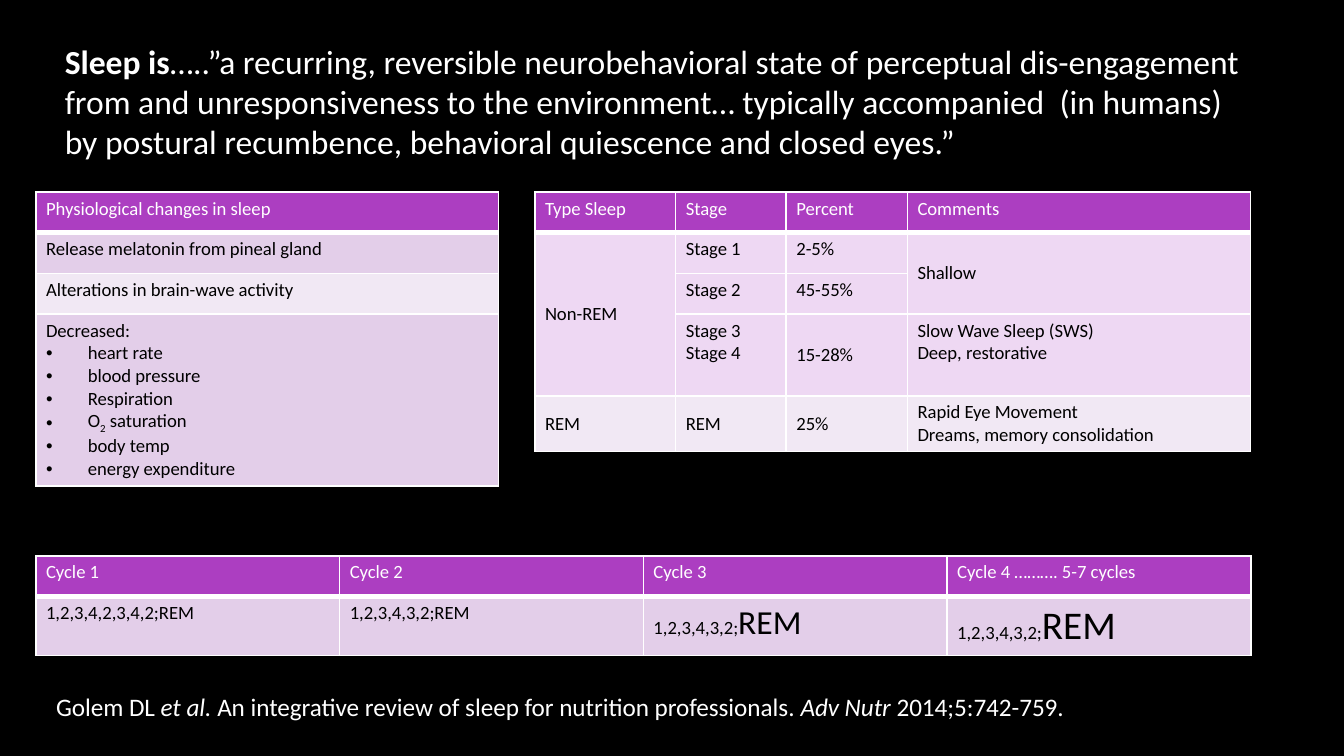
from dataclasses import dataclass
from typing import NamedTuple

from lxml import etree
from pptx import Presentation
from pptx.dml.color import RGBColor
from pptx.enum import text as t
from pptx.oxml import ns
from pptx.util import Cm, Pt

BLACK = RGBColor(0x00, 0x00, 0x00)
WHITE = RGBColor(0xFF, 0xFF, 0xFF)
PURPLE = RGBColor(0xAC, 0x3E, 0xC1)
LILAC = RGBColor(0xE3, 0xCE, 0xE9)
PINK = RGBColor(0xEE, 0xD8, 0xF3)
PALE = RGBColor(0xF1, 0xE8, 0xF4)

FONT = "Calibri"
ROW = 0.77
BULLET_INDENT = 0.79


class Span(NamedTuple):
    text: str
    size: float = 10
    bold: bool = False
    italic: bool = False
    baseline: int = 0


class Line(NamedTuple):
    spans: list[Span]
    bullet: bool = False


class Cell(NamedTuple):
    lines: list[Line]
    middle: bool = False
    rows: int = 1


@dataclass
class Grid:
    left: float
    top: float
    widths: list[float]
    heights: list[float]
    fills: list[RGBColor]
    cells: list[list[Cell | None]]  # None is covered by the cell above


def plain(*texts: str, middle: bool = False, rows: int = 1) -> Cell:
    return Cell([Line([Span(text)]) for text in texts], middle, rows)


def add_span(para, text: str, *, size: float = 10, color: RGBColor = WHITE,
             bold: bool = False, italic: bool = False, baseline: int = 0) -> None:
    span = para.add_run()
    span.text = text
    font = span.font
    font.name, font.size = FONT, Pt(size)
    font.bold, font.italic = bold, italic
    font.color.rgb = color
    if baseline:
        span._r.get_or_add_rPr().set("baseline", str(baseline * 1000))


def add_bullet(para) -> None:
    props = para._p.get_or_add_pPr()
    props.set("marL", str(Cm(BULLET_INDENT)))
    props.set("indent", str(-Cm(BULLET_INDENT)))
    etree.SubElement(props, ns.qn("a:buFont"), typeface="Arial")
    etree.SubElement(props, ns.qn("a:buChar"), char="•")


def write_lines(frame, lines: list[Line], color: RGBColor) -> None:
    for index, line in enumerate(lines):
        para = frame.add_paragraph() if index else frame.paragraphs[0]
        para.alignment = t.PP_ALIGN.LEFT
        if line.bullet:
            add_bullet(para)
        for span in line.spans:
            add_span(para, color=color, **span._asdict())


def style_cell(cell, fill: RGBColor, header: bool) -> None:
    """Set borders, then fill: the schema wants them in that order."""
    props = cell._tc.get_or_add_tcPr()
    for side in "LRTB":
        width = Pt(3 if header and side == "B" else 1)
        border = etree.SubElement(props, ns.qn(f"a:ln{side}"), w=str(width))
        solid = etree.SubElement(border, ns.qn("a:solidFill"))
        etree.SubElement(solid, ns.qn("a:srgbClr"), val=str(WHITE))
    cell.fill.solid()
    cell.fill.fore_color.rgb = fill
    cell.margin_left = cell.margin_right = Cm(0.19)
    cell.margin_top = cell.margin_bottom = Cm(0.1)


def draw_grid(page, grid: Grid) -> None:
    table = page.shapes.add_table(
        len(grid.heights), len(grid.widths), Cm(grid.left), Cm(grid.top),
        Cm(sum(grid.widths)), Cm(sum(grid.heights))).table
    for column, width in zip(table.columns, grid.widths):
        column.width = Cm(width)
    for row, height in zip(table.rows, grid.heights):
        row.height = Cm(height)
    for r, (fill, cells) in enumerate(zip(grid.fills, grid.cells)):
        for c, content in enumerate(cells):
            cell = table.cell(r, c)
            style_cell(cell, fill, header=r == 0)
            if content is None:
                continue
            if content.rows > 1:
                cell.merge(table.cell(r + content.rows - 1, c))
            if content.middle:
                cell.vertical_anchor = t.MSO_ANCHOR.MIDDLE
            write_lines(cell.text_frame, content.lines, BLACK if r else WHITE)


STAGES = Grid(
    10.11, 3.63, [2.66, 2.09, 2.29, 6.48], [ROW, ROW, ROW, 2 * ROW, 1.04],
    [PURPLE, PINK, PINK, PINK, PALE],
    [
        [plain(name) for name in ("Type Sleep", "Stage", "Percent", "Comments")],
        [plain("Non-REM", middle=True, rows=3), plain("Stage 1"), plain("2-5%"),
         plain("Shallow", middle=True, rows=2)],
        [None, plain("Stage 2"), plain("45-55%"), None],
        [None, plain("Stage 3", "Stage 4"), plain("15-28%", middle=True),
         plain("Slow Wave Sleep (SWS)", "Deep, restorative")],
        [plain("REM", middle=True), plain("REM", middle=True), plain("25%", middle=True),
         plain("Rapid Eye Movement", "Dreams, memory consolidation")],
    ])

CYCLES = Grid(
    0.68, 10.51, [5.74] * 4, [ROW, 1.08], [PURPLE, LILAC],
    [
        [plain(name) for name in ("Cycle 1", "Cycle 2", "Cycle 3", "Cycle 4 ………. 5-7 cycles")],
        [plain("1,2,3,4,2,3,4,2;REM"), plain("1,2,3,4,3,2;REM")]
        + [Cell([Line([Span("1,2,3,4,3,2;"), Span("REM", size)])]) for size in (18, 21)],
    ])

DECREASED = [
    [Span("heart rate")],
    [Span("blood pressure")],
    [Span("Respiration")],
    [Span("O"), Span("2", baseline=-25), Span(" saturation")],
    [Span("body temp")],
    [Span("energy expenditure")],
]

CHANGES = Grid(
    0.68, 3.63, [8.74], [ROW, ROW, ROW, 3.2], [PURPLE, LILAC, PALE, LILAC],
    [
        [plain("Physiological changes in sleep")],
        [plain("Release melatonin from pineal gland")],
        [plain("Alterations in brain-wave activity")],
        [Cell([Line([Span("Decreased:")])] + [Line(spans, True) for spans in DECREASED])],
    ])

DEFINITION = Line([
    Span("Sleep is", 18, bold=True),
    Span("…..”a recurring, reversible neurobehavioral state of perceptual dis-engagement "
         "from and unresponsiveness to the environment… typically accompanied  (in humans) "
         "by postural recumbence, behavioral quiescence and closed eyes.”", 18),
])

CITATION = Line([
    Span("Golem DL ", 13.5),
    Span("et al. ", 13.5, italic=True),
    Span("An integrative review of sleep for nutrition professionals. ", 13.5),
    Span("Adv Nutr ", 13.5, italic=True),
    Span("2014;5:742-759.", 13.5),
])


def main() -> None:
    deck = Presentation()
    deck.slide_width, deck.slide_height = Cm(25.4), Cm(14.29)
    page = deck.slides.add_slide(deck.slide_layouts[5])
    page.background.fill.solid()
    page.background.fill.fore_color.rgb = BLACK

    title = page.shapes.title
    title.left, title.top, title.width, title.height = Cm(0.97), Cm(0.64), Cm(22.73), Cm(2.57)
    title.text_frame.vertical_anchor = t.MSO_ANCHOR.TOP
    title.text_frame.auto_size = t.MSO_AUTO_SIZE.NONE
    title.text_frame.word_wrap = True
    write_lines(title.text_frame, [DEFINITION], WHITE)

    for grid in (STAGES, CYCLES, CHANGES):
        draw_grid(page, grid)

    box = page.shapes.add_textbox(Cm(0.81), Cm(12.95), Cm(19.86), Cm(0.84))
    box.text_frame.word_wrap = False
    write_lines(box.text_frame, [CITATION], WHITE)

    deck.save("out.pptx")


if __name__ == "__main__":
    main()
